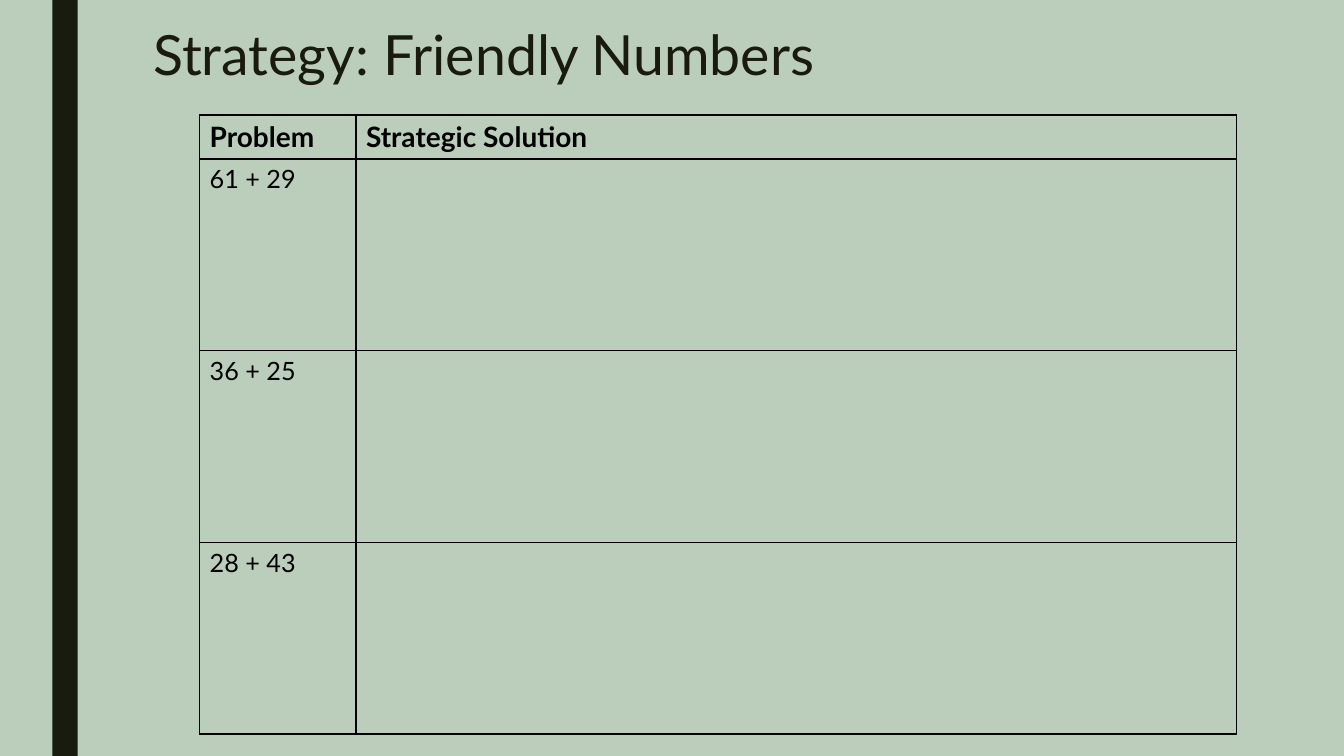
import pptx
import pptx.dml.color
import pptx.enum.shapes
import pptx.enum.text
import pptx.oxml
import pptx.oxml.ns
import pptx.util
from pptx.util import Cm, Pt

TITLE = "Strategy: Friendly Numbers"
HEADER = ("Problem", "Strategic Solution")
PROBLEMS = ("61 + 29", "36 + 25", "28 + 43")

FONT = "Lato"
GREEN, DARK, BLACK = "BBCDBB", "191B0E", "000000"
SLIDE_W, SLIDE_H = Cm(33.87), Cm(19.05)
COL_WIDTHS = (Cm(3.94), Cm(22.2))
HEADER_H, ROW_H = Cm(1.1), Cm(4.83)


def color(hex_value):
    return pptx.dml.color.RGBColor.from_string(hex_value)


def format_runs(tf, size, hex_value, bold=False):
    for p in tf.paragraphs:
        for r in p.runs:
            r.font.name = FONT
            r.font.size = Pt(size)
            r.font.bold = bold
            r.font.color.rgb = color(hex_value)


def add_borders(cell):
    """Draw a 1 pt black line on all four sides of the cell."""
    tc_pr = cell._tc.get_or_add_tcPr()
    for i, side in enumerate(("lnL", "lnR", "lnT", "lnB")):
        ln = pptx.oxml.parse_xml(
            f'<a:{side} {pptx.oxml.ns.nsdecls("a")} w="{Pt(1)}"><a:solidFill>'
            f'<a:srgbClr val="{BLACK}"/></a:solidFill></a:{side}>')
        tc_pr.insert(i, ln)


def add_title(slide):
    title = slide.shapes.title
    title.left, title.top = Cm(3.61), Cm(0.58)
    title.width, title.height = Cm(26.67), Cm(1.9)
    tf = title.text_frame
    tf.text = TITLE
    tf.word_wrap = True
    tf.auto_size = pptx.enum.text.MSO_AUTO_SIZE.NONE
    tf.vertical_anchor = pptx.enum.text.MSO_ANCHOR.TOP
    p = tf.paragraphs[0]
    p.alignment = pptx.enum.text.PP_ALIGN.LEFT
    p.line_spacing = 0.89
    format_runs(tf, 39.6, DARK)


def add_problem_table(slide):
    rows = [HEADER] + [(problem, "") for problem in PROBLEMS]
    heights = [HEADER_H] + [ROW_H] * len(PROBLEMS)
    table = slide.shapes.add_table(
        len(rows), len(HEADER), Cm(5.03), Cm(2.9),
        sum(COL_WIDTHS), sum(heights)).table
    table.horz_banding = False
    for column, width in zip(table.columns, COL_WIDTHS):
        column.width = width
    for i, (texts, height) in enumerate(zip(rows, heights)):
        table.rows[i].height = height
        for j, text in enumerate(texts):
            cell = table.cell(i, j)
            cell.fill.background()
            add_borders(cell)
            if text:
                cell.text_frame.text = text
                format_runs(cell.text_frame, 18 if i else 20, BLACK, bold=i == 0)


def main():
    prs = pptx.Presentation()
    prs.slide_width, prs.slide_height = SLIDE_W, SLIDE_H
    slide = prs.slides.add_slide(prs.slide_layouts[5])
    slide.background.fill.solid()
    slide.background.fill.fore_color.rgb = color(GREEN)

    bar = slide.shapes.add_shape(
        pptx.enum.shapes.MSO_SHAPE.RECTANGLE, Cm(1.32), 0, Cm(0.64), SLIDE_H)
    bar.shadow.inherit = False
    bar.fill.solid()
    bar.fill.fore_color.rgb = color(DARK)
    bar.line.fill.background()

    add_title(slide)
    add_problem_table(slide)
    prs.save("out.pptx")


if __name__ == "__main__":
    main()
